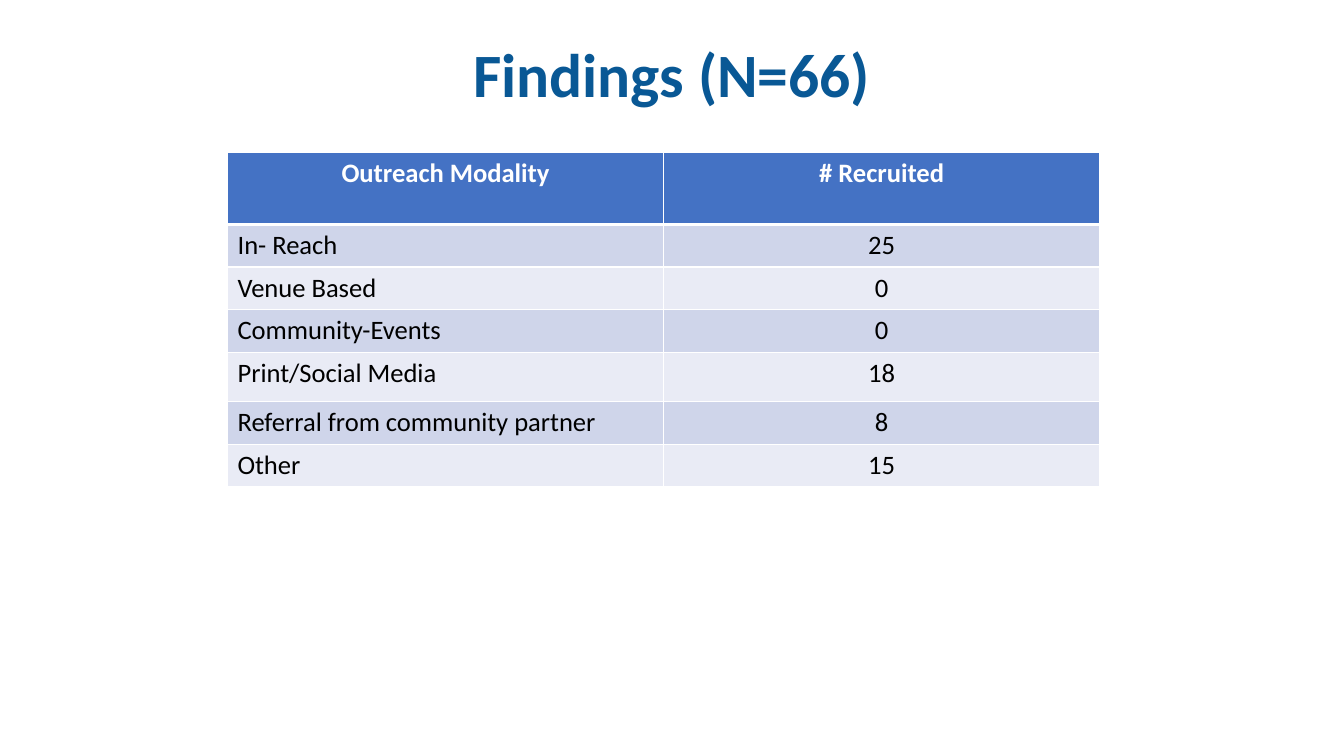
import dataclasses

import lxml.etree
import pptx
import pptx.dml.color
import pptx.enum.text
import pptx.oxml.ns
import pptx.util

ALIGN = pptx.enum.text.PP_ALIGN


@dataclasses.dataclass(frozen=True)
class Theme:
    """Colours, font and type sizes of the slide."""
    font: str = "Calibri"
    title_size: int = 44
    table_size: int = 19
    title: str = "095895"
    header: str = "4472C4"
    bands: tuple = ("CFD5EA", "E9EBF5")
    light: str = "FFFFFF"
    dark: str = "000000"
    thin: int = 1
    thick: int = 3


class Page:
    """Draws on one slide, measured in a grid of 40 columns and 30 rows."""

    def __init__(self, deck, theme):
        """Add a title-only slide to the deck."""
        self.theme = theme
        self.column = deck.slide_width / 40
        self.row = deck.slide_height / 30
        self.slide = deck.slides.add_slide(deck.slide_layouts[5])
        self.slide.background.fill.solid()
        self.slide.background.fill.fore_color.rgb = self.color(theme.light)

    def color(self, code):
        """Turn a hex code into a colour."""
        return pptx.dml.color.RGBColor.from_string(code)

    def across(self, columns):
        """Give the length of a number of columns."""
        return pptx.util.Emu(round(columns * self.column))

    def down(self, rows):
        """Give the length of a number of rows."""
        return pptx.util.Emu(round(rows * self.row))

    def add_span(self, para, text, size, color, bold, align):
        """Add one formatted run to a paragraph."""
        para.alignment = align
        span = para.add_run()
        span.text = text
        span.font.name = self.theme.font
        span.font.size = pptx.util.Pt(size)
        span.font.bold = bold
        span.font.color.rgb = self.color(color)

    def title(self, text, left, top, width, height):
        """Place and fill the title placeholder."""
        box = self.slide.shapes.title
        box.left, box.top = self.across(left), self.down(top)
        box.width, box.height = self.across(width), self.down(height)
        frame = box.text_frame
        frame.word_wrap = True
        frame.auto_size = pptx.enum.text.MSO_AUTO_SIZE.NONE
        frame.vertical_anchor = pptx.enum.text.MSO_ANCHOR.MIDDLE
        para = frame.paragraphs[0]
        para.line_spacing = 0.9
        self.add_span(para, text, self.theme.title_size, self.theme.title, True, ALIGN.CENTER)

    def borders(self, cell, top, bottom):
        """Draw the four edges of a table cell."""
        properties = cell._tc.get_or_add_tcPr()
        widths = {"a:lnL": self.theme.thin, "a:lnR": self.theme.thin, "a:lnT": top, "a:lnB": bottom}
        for tag, width in widths.items():
            line = lxml.etree.SubElement(properties, pptx.oxml.ns.qn(tag), w=str(pptx.util.Pt(width)))
            fill = lxml.etree.SubElement(line, pptx.oxml.ns.qn("a:solidFill"))
            lxml.etree.SubElement(fill, pptx.oxml.ns.qn("a:srgbClr"), val=self.theme.light)

    def table(self, records, left, top, column_width, heights):
        """Add a banded table whose first record is the header."""
        theme = self.theme
        count = len(records[0])
        grid = self.slide.shapes.add_table(
            len(records), count, self.across(left), self.down(top),
            self.across(column_width * count), self.down(sum(heights))).table
        for column in grid.columns:
            column.width = self.across(column_width)
        for index, (record, height) in enumerate(zip(records, heights)):
            grid.rows[index].height = self.down(height)
            header = index == 0
            for position, text in enumerate(record):
                cell = grid.cell(index, position)
                self.borders(cell, theme.thick if index == 1 else theme.thin,
                             theme.thick if header else theme.thin)
                cell.fill.solid()
                cell.fill.fore_color.rgb = self.color(
                    theme.header if header else theme.bands[(index - 1) % 2])
                self.add_span(cell.text_frame.paragraphs[0], text, theme.table_size,
                              theme.light if header else theme.dark, header,
                              ALIGN.CENTER if header or position else ALIGN.LEFT)


def main():
    """Build and save the findings slide."""
    deck = pptx.Presentation()
    deck.slide_width = pptx.util.Inches(13.33)
    deck.slide_height = pptx.util.Inches(7.5)
    page = Page(deck, Theme())
    page.title("Findings (N=66)", 2.75, 1.25, 34.5, 3.64)
    findings = [
        ("Outreach Modality", "# Recruited"),
        ("In- Reach", "25"),
        ("Venue Based", "0"),
        ("Community-Events", "0"),
        ("Print/Social Media", "18"),
        ("Referral from community partner", "8"),
        ("Other", "15"),
    ]
    page.table(findings, 6.77, 6.04, 12.98, [2.87, 1.69, 1.69, 1.69, 1.96, 1.7, 1.69])
    deck.save("out.pptx")


if __name__ == "__main__":
    main()
